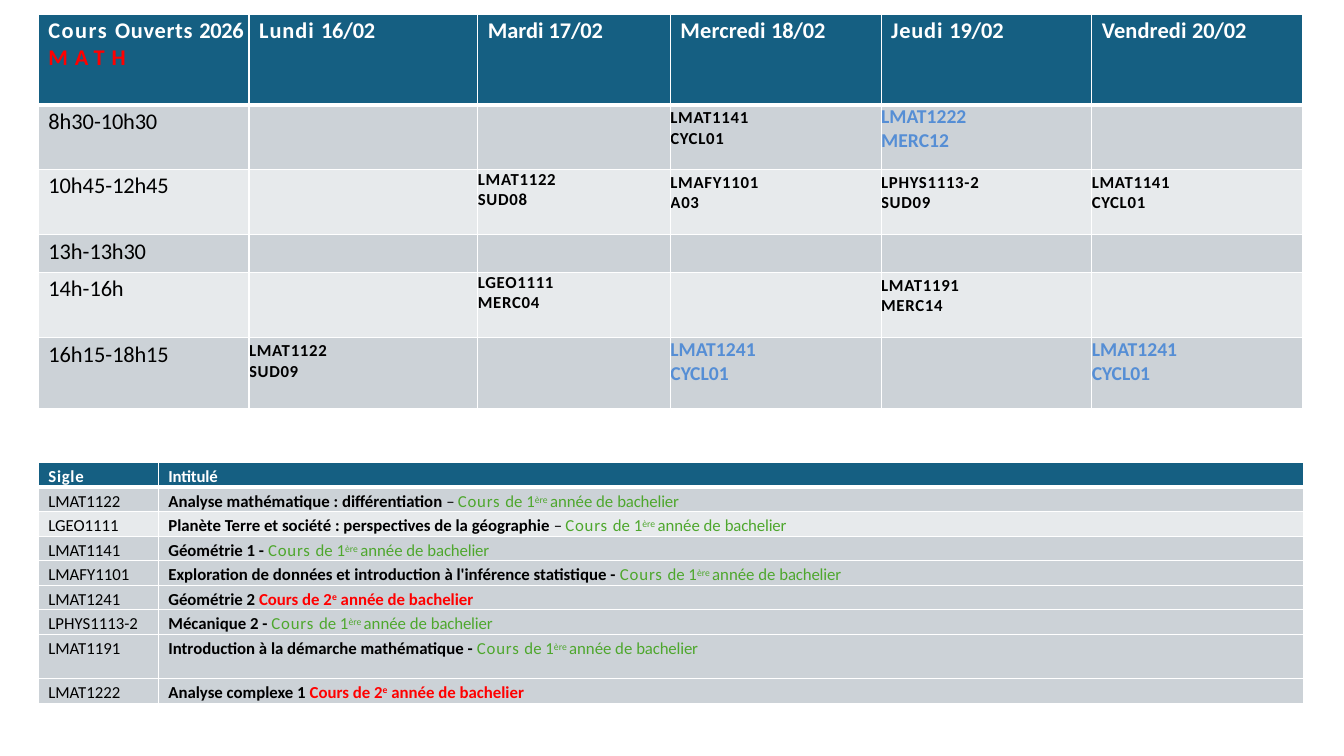
from copy import deepcopy
from dataclasses import dataclass

from lxml import etree
from pptx import Presentation
from pptx import util as u
from pptx.dml.color import RGBColor
from pptx.oxml import ns


@dataclass(frozen=True)
class Theme:
    font: str = "Calibri"
    header: str = "155F82"
    dark: str = "CCD2D7"
    light: str = "E7EAEC"
    white: str = "FFFFFF"
    black: str = "000000"
    red: str = "FF0000"
    blue: str = "558ED5"
    green: str = "4EA72D"
    hour: float = 16
    second_year: float = 14
    small: float = 12
    rule: float = 1
    header_rule: float = 3
    indent: float = 0.1


T = Theme()
W, H = 13.33, 7.5
LEFT = 0.38

DAYS = [("Lundi ", 0.7, "16/02"), ("Mardi ", 0, "17/02"), ("Mercredi ", 0.1, "18/02"),
        ("Jeudi ", 0.6, "19/02"), ("Vendredi ", 0.1, "20/02")]
DAY_COLS = [2.09, 2.27, 1.91, 2.09, 2.09, 2.09]
# hours, row height, fill, {day column: (course, room)}
SLOTS = [
    ("8h30-", "10h30", 0.64, T.dark, {3: ("LMAT1141", "CYCL01"), 4: ("LMAT1222", "MERC12")}),
    ("10h45-", "12h45", 0.65, T.light, {2: ("LMAT1122", "SUD08"), 3: ("LMAFY1101", "A03"),
                                        4: ("LPHYS1113-2", "SUD09"), 5: ("LMAT1141", "CYCL01")}),
    ("13h-", "13h30", 0.37, T.dark, {}),
    ("14h-", "16h", 0.65, T.light, {2: ("LGEO1111", "MERC04"), 4: ("LMAT1191", "MERC14")}),
    ("16h15-", "18h15", 0.7, T.dark, {1: ("LMAT1122", "SUD09"), 3: ("LMAT1241", "CYCL01"),
                                      5: ("LMAT1241", "CYCL01")}),
]
SECOND_YEAR = {"LMAT1222", "LMAT1241"}
COURSES = [
    ("LMAT1122", "Analyse mathématique : différentiation ", "– "),
    ("LGEO1111", "Planète Terre et société : perspectives de la géographie ", "– "),
    ("LMAT1141", "Géométrie 1 - ", ""),
    ("LMAFY1101", "Exploration de données et introduction à l'inférence statistique - ", ""),
    ("LMAT1241", "Géométrie 2 ", ""),
    ("LPHYS1113-2", "Mécanique 2 - ", ""),
    ("LMAT1191", "Introduction à la démarche mathématique - ", ""),
    ("LMAT1222", "Analyse complexe 1 ", ""),
]
COURSE_COLS = [1.19, 11.36]
COURSE_ROWS = [0.23] + [0.24] * 6 + [0.44, 0.24]


def add_run(p, text, size, color=T.black, bold=False, spc=0, base=0):
    """Add text to p; spc is in points, base in percent, a newline is a line break."""
    for i, line in enumerate(text.split("\n")):
        br = p._p.add_br() if i else None
        r = p.add_run()
        r.text = line
        for name, value in {"size": u.Pt(size), "bold": bold, "name": T.font}.items():
            setattr(r.font, name, value)
        r.font.color.rgb = RGBColor.from_string(color)
        rPr = r._r.get_or_add_rPr()
        for name, value, scale in (("spc", spc, 100), ("baseline", base, 1000)):
            if value:
                rPr.set(name, str(round(value * scale)))
        if br is not None:
            br.append(deepcopy(rPr))


def fill_cell(cell, runs, fill, row, left=0, top=0):
    for name, value in {"left": left, "top": top, "right": 0, "bottom": 0}.items():
        setattr(cell, f"margin_{name}", u.Inches(value))
    tcPr = cell._tc.get_or_add_tcPr()
    heavy_side = {0: "B", 1: "T"}.get(row)
    for side in "LRTB":
        width = T.header_rule if side == heavy_side else T.rule
        ln = etree.SubElement(tcPr, ns.qn(f"a:ln{side}"), w=str(u.Pt(width)))
        solid = etree.SubElement(ln, ns.qn("a:solidFill"))
        etree.SubElement(solid, ns.qn("a:srgbClr"), val=T.white)
    cell.fill.solid()
    cell.fill.fore_color.rgb = RGBColor.from_string(fill)
    for text, style in runs:
        add_run(cell.text_frame.paragraphs[0], text, **style)


def add_grid(s, left, top, cols, rows):
    frame = s.shapes.add_table(len(rows), len(cols), u.Inches(left), u.Inches(top),
                               u.Inches(sum(cols)), u.Inches(sum(rows)))
    tbl = frame.table
    tbl.horz_banding = False
    for col, width in zip(tbl.columns, cols):
        col.width = u.Inches(width)
    for row, height in zip(tbl.rows, rows):
        row.height = u.Inches(height)
    return tbl


def timetable(s, left, top):
    tbl = add_grid(s, left, top, DAY_COLS, [0.9] + [slot[2] for slot in SLOTS])
    head = dict(size=T.hour, color=T.white, bold=True)
    heads = [[("Cours ", head | {"spc": 1.1}), ("Ouverts ", head | {"spc": 0.5}),
              ("2026 ", head | {"spc": -0.2}), ("MATH", head | {"color": T.red, "spc": 5})]]
    heads += [[(day, head | {"spc": spc}), (date, head | {"spc": -0.1})]
              for day, spc, date in DAYS]
    for c, runs in enumerate(heads):
        fill_cell(tbl.cell(0, c), runs, T.header, 0, T.indent, 0.03)
    first_year = dict(size=T.small, bold=True, spc=0.5)
    second_year = dict(size=T.second_year, bold=True, color=T.blue)
    for row, (start, end, _, fill, lessons) in enumerate(SLOTS, 1):
        hours = [(start, dict(size=T.hour)), (end, dict(size=T.hour, spc=-0.1))]
        fill_cell(tbl.cell(row, 0), hours, fill, row, T.indent, 0.03)
        for c in range(1, len(DAY_COLS)):
            lesson = lessons.get(c)
            advanced = lesson and lesson[0] in SECOND_YEAR
            runs = [("\n".join(lesson), second_year if advanced else first_year)] if lesson else []
            fill_cell(tbl.cell(row, c), runs, fill, row, top=0 if advanced or c == 2 else 0.03)


def year_runs(code):
    if code in SECOND_YEAR:
        red = dict(size=T.small, color=T.red, bold=True)
        return [("Cours de 2", red), ("e", red | {"base": 30}), (" année de bachelier", red)]
    green = dict(size=T.small, color=T.green)
    return [("Cours ", green | {"spc": 0.6}), ("de 1", green), ("ère ", green | {"base": 24}),
            ("année de ", green), ("bachelier", green | {"spc": -0.1})]


def course_list(s, left, top):
    tbl = add_grid(s, left, top, COURSE_COLS, COURSE_ROWS)
    head = dict(size=T.small, color=T.white, bold=True)
    rows = [([("Sigle", head | {"spc": 0.5})], [("Intitulé", head | {"spc": -0.1})])]
    for code, title, dash in COURSES:
        runs = [(title, dict(size=T.small, bold=True))]
        if dash:
            runs.append((dash, dict(size=T.small, spc=-0.6)))
        rows.append(([(code, dict(size=T.small))], runs + year_runs(code)))
    for r, row in enumerate(rows):
        fill = {0: T.header, 2: T.light}.get(r, T.dark)
        for c, runs in enumerate(row):
            fill_cell(tbl.cell(r, c), runs, fill, r, T.indent, 0.04)


def main():
    prs = Presentation()
    prs.slide_width, prs.slide_height = u.Inches(W), u.Inches(H)
    s = prs.slides.add_slide(prs.slide_layouts[6])
    timetable(s, LEFT, 0.14)
    course_list(s, LEFT, 4.59)
    prs.save("out.pptx")


if __name__ == "__main__":
    main()
